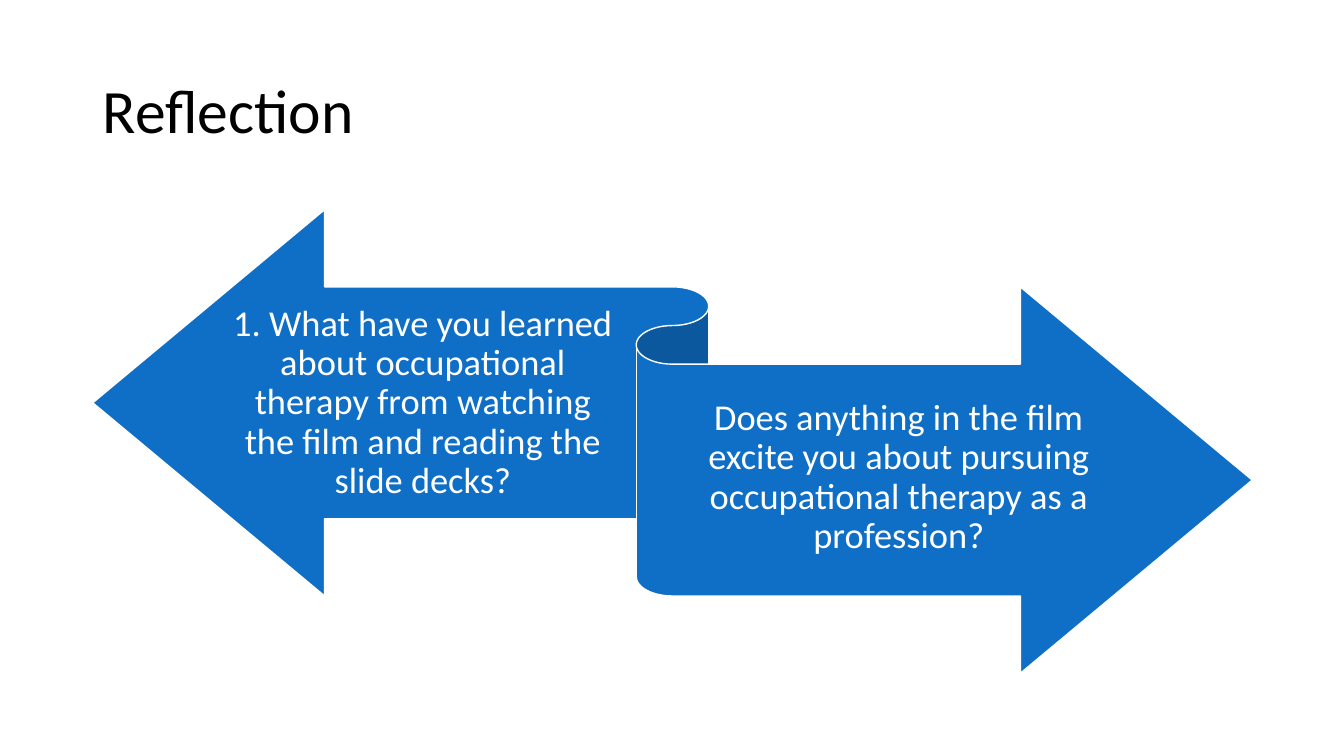
from pptx import Presentation
from pptx.dml.color import RGBColor
from pptx.enum.shapes import MSO_SHAPE
from pptx.enum.text import MSO_ANCHOR, PP_ALIGN
from pptx.util import Inches, Pt

COLORS = {"title": "000000", "ribbon": "0F6FC6", "light": "FFFFFF"}
FONT = "Calibri"


def write_text(frame, text, size, color, align=PP_ALIGN.LEFT, line_spacing=0.9):
    paragraph = frame.paragraphs[0]
    paragraph.alignment = align
    paragraph.line_spacing = line_spacing
    run = paragraph.add_run()
    run.text = text
    run.font.name = FONT
    run.font.size = Pt(size)
    run.font.color.rgb = RGBColor.from_string(COLORS[color])


class SlideBuilder:
    """Hold the slide and draw its styled elements."""

    def __init__(self, presentation):
        self.slide = presentation.slides.add_slide(presentation.slide_layouts[6])

    def add_text(self, text, box, margins, **text_format):
        shape = self.slide.shapes.add_textbox(*map(Inches, box))
        frame = shape.text_frame
        frame.word_wrap = True
        frame.vertical_anchor = MSO_ANCHOR.MIDDLE
        (frame.margin_left, frame.margin_top,
         frame.margin_right, frame.margin_bottom) = map(Inches, margins)
        write_text(frame, text, **text_format)

    def add_title(self, text, box):
        self.add_text(text, box, (0.1, 0.05, 0.1, 0.05), size=44, color="title")

    def add_question(self, text, box):
        self.add_text(text, box, (0, 0.1, 0, 0.11), size=26, color="light",
                      align=PP_ALIGN.CENTER)

    def add_ribbon(self, box):
        shape = self.slide.shapes.add_shape(
            MSO_SHAPE.LEFT_RIGHT_RIBBON, *map(Inches, box))
        shape.shadow.inherit = False
        shape.fill.solid()
        shape.fill.fore_color.rgb = RGBColor.from_string(COLORS["ribbon"])
        shape.line.color.rgb = RGBColor.from_string(COLORS["light"])
        shape.line.width = Pt(1)


def main():
    presentation = Presentation()
    presentation.slide_width = Inches(13.33)
    presentation.slide_height = Inches(7.5)

    builder = SlideBuilder(presentation)
    builder.add_title("Reflection", (0.92, 0.4, 11.5, 1.45))
    builder.add_ribbon((0.92, 2.08, 11.5, 4.6))
    builder.add_question(
        "1. What have you learned about occupational therapy from watching "
        "the film and reading the slide decks?",
        (2.3, 2.88, 3.79, 2.25))
    builder.add_question(
        "Does anything in the film excite you about pursuing occupational "
        "therapy as a profession?",
        (6.67, 3.62, 4.49, 2.25))

    presentation.save("out.pptx")


if __name__ == "__main__":
    main()
